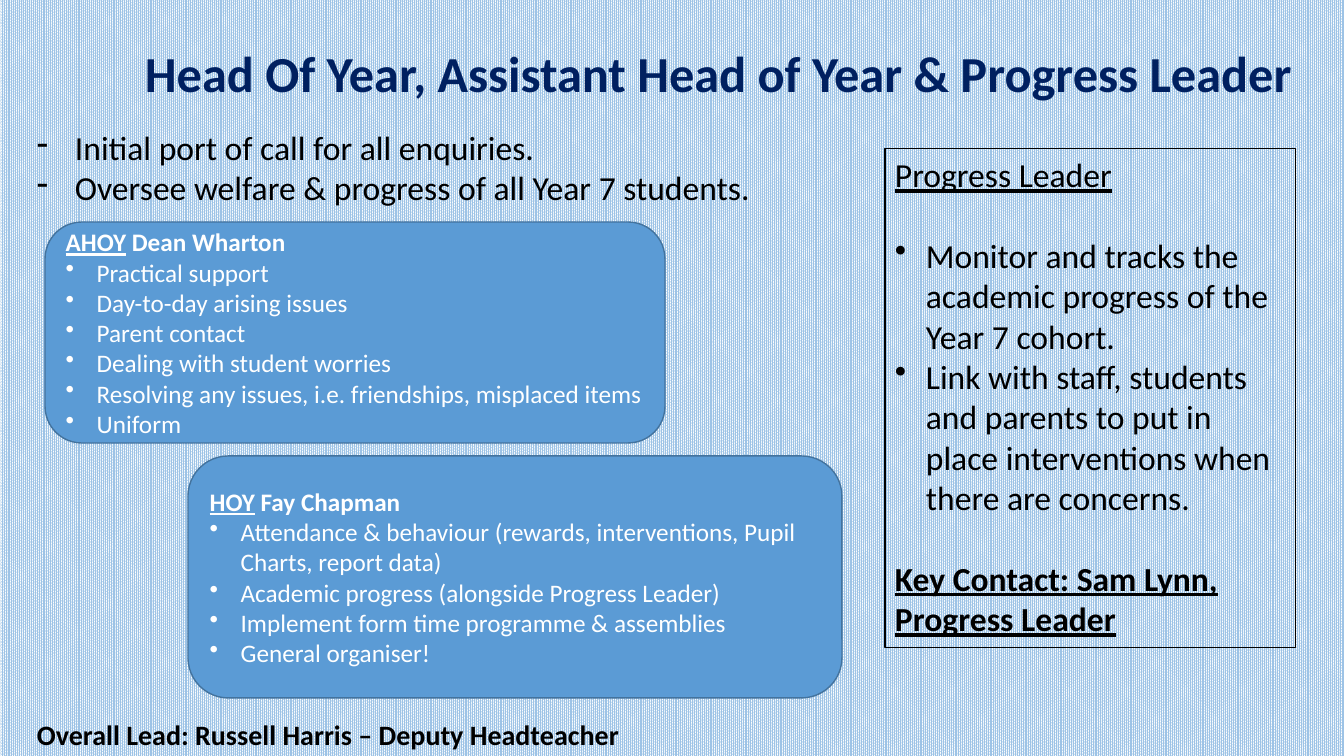
from lxml import etree
from pptx import Presentation
from pptx.dml.color import RGBColor
from pptx.enum.dml import MSO_PATTERN
from pptx.enum.shapes import MSO_SHAPE
from pptx.enum.text import MSO_ANCHOR, PP_ALIGN
from pptx.oxml.ns import qn
from pptx.util import Emu, Pt

RECT, ROUNDED = MSO_SHAPE.RECTANGLE, MSO_SHAPE.ROUNDED_RECTANGLE
TOP, MIDDLE = MSO_ANCHOR.TOP, MSO_ANCHOR.MIDDLE
LEFT = PP_ALIGN.LEFT
EMU_PER_PX = 12192000 / 1344
BULLET, DASH = ("•", 31), ("-", 38)
BOLD = {"bold": True}
UNDERLINE = {"underline": True}
HEADING = {"bold": True, "underline": True}


def px(n):
    return Emu(round(n * EMU_PER_PX))


def rgb(color):
    return RGBColor.from_string(color)


prs = Presentation()
prs.slide_width, prs.slide_height = px(1344), px(756)
s = prs.slides.add_slide(prs.slide_layouts[6])
bg = s.background.fill
bg.patterned()
bg.pattern = MSO_PATTERN.PERCENT_90
bg.fore_color.rgb, bg.back_color.rgb = rgb("9DC3E6"), rgb("FFFFFF")

# Paragraph: (bullet, space before in points, [(text, font format), ...])
overview = [
    (DASH, 0, [("Initial port of call for all enquiries.", {})]),
    (DASH, 0, [("Oversee welfare & progress of all Year 7 students.", {})]),
    (None, 364, [("Overall Lead: Russell Harris – Deputy Headteacher",
                  {"bold": True, "size": Pt(20)})]),
]
title = [(None, 0, [("Head Of Year, Assistant Head of Year & Progress Leader", BOLD)])]
progress_leader = [
    (None, 0, [("Progress Leader", UNDERLINE)]),
    (BULLET, 29, [("Monitor and tracks the academic progress of the Year 7 cohort.", {})]),
    (BULLET, 0, [("Link with staff, students and parents to put in place "
                  "interventions when there are concerns.", {})]),
    (None, 29, [("Key Contact: Sam Lynn, Progress Leader", HEADING)]),
]
ahoy = [(None, 0, [("AHOY", HEADING), (" Dean Wharton", BOLD)])]
ahoy += [(BULLET, 0, [(duty, {})]) for duty in (
    "Practical support",
    "Day-to-day arising issues",
    "Parent contact",
    "Dealing with student worries",
    "Resolving any issues, i.e. friendships, misplaced items",
    "Uniform",
)]
hoy = [(None, 0, [("HOY", HEADING), (" Fay Chapman", BOLD)])]
hoy += [(BULLET, 0, [(duty, {})]) for duty in (
    "Attendance & behaviour (rewards, interventions, Pupil Charts, report data)",
    "Academic progress (alongside Progress Leader)",
    "Implement form time programme & assemblies",
    "General organiser!",
)]

# Box: (position, preset, fill, line, anchor, wrap, text size, text colour, paragraphs)
boxes = [
    ((27, 122, 802, 641), None, None, None, TOP, True, 24, "000000", overview),
    ((135, 37, 1179, 72), None, None, None, TOP, False, 36, "002060", title),
    ((885, 149, 411, 499), RECT, None, ("000000", 0.75), TOP, True, 24, "000000",
     progress_leader),
    ((45, 222, 620, 221), ROUNDED, "5B9BD5", ("43739E", 1), MIDDLE, True, 18, "FFFFFF", ahoy),
    ((188, 456, 654, 242), ROUNDED, "5B9BD5", ("43739E", 1), MIDDLE, True, 18, "FFFFFF", hoy),
]

for position, preset, fill, line, anchor, wrap, size, color, paragraphs in boxes:
    place = [px(n) for n in position]
    if preset is None:
        sp = s.shapes.add_textbox(*place)
    else:
        sp = s.shapes.add_shape(preset, *place)
        sp.shadow.inherit = False
        sp.line.color.rgb, sp.line.width = rgb(line[0]), Pt(line[1])
        if fill:
            sp.fill.solid()
            sp.fill.fore_color.rgb = rgb(fill)
        else:
            sp.fill.background()
    tf = sp.text_frame
    tf.word_wrap, tf.vertical_anchor = wrap, anchor
    for i, (bullet, gap, runs) in enumerate(paragraphs):
        p = tf.add_paragraph() if i else tf.paragraphs[0]
        p.alignment, p.space_before = LEFT, Pt(gap)
        if bullet:
            char, indent = bullet
            pPr = p._p.get_or_add_pPr()
            pPr.set("marL", str(px(indent)))
            pPr.set("indent", str(-px(indent)))
            etree.SubElement(pPr, qn("a:buChar")).set("char", char)
        for text, font in runs:
            r = p.add_run()
            r.text = text
            r.font.color.rgb = rgb(color)
            for name, value in {"name": "Calibri", "size": Pt(size), **font}.items():
                setattr(r.font, name, value)

prs.save("out.pptx")
